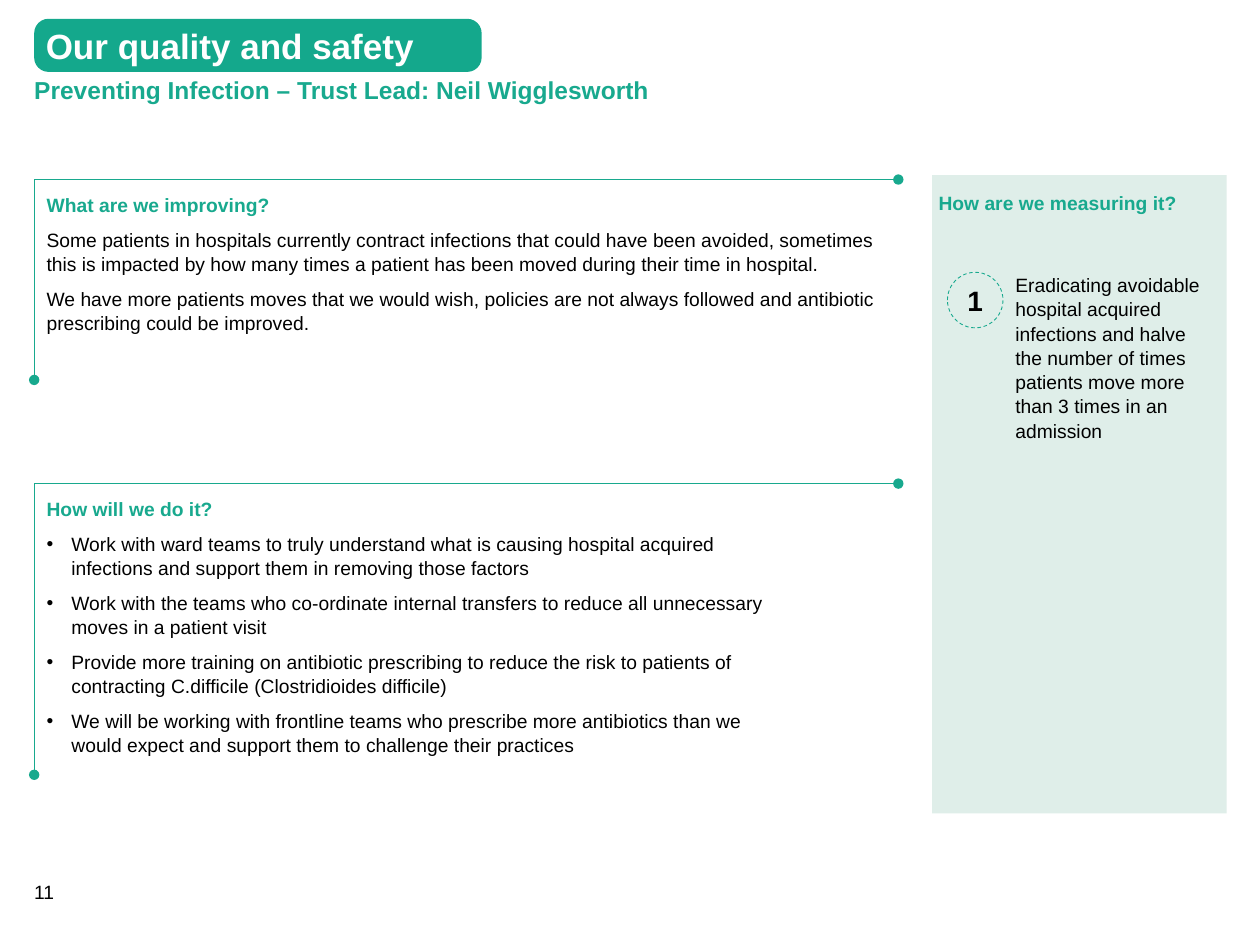
from dataclasses import dataclass

from lxml import etree
from pptx import Presentation
from pptx.dml.color import RGBColor
from pptx.enum.dml import MSO_LINE
from pptx.enum.shapes import MSO_SHAPE
from pptx.enum.text import MSO_ANCHOR, PP_ALIGN
from pptx.oxml.ns import qn
from pptx.util import Cm, Pt

RECTANGLE, ROUNDED, OVAL = MSO_SHAPE.RECTANGLE, MSO_SHAPE.ROUNDED_RECTANGLE, MSO_SHAPE.OVAL
TOP, MIDDLE = MSO_ANCHOR.TOP, MSO_ANCHOR.MIDDLE
LEFT, CENTER = PP_ALIGN.LEFT, PP_ALIGN.CENTER
DASH = MSO_LINE.DASH


@dataclass(frozen=True)
class Theme:
    font: str = "Arial"
    banner: RGBColor = RGBColor(0x14, 0xA8, 0x8C)
    accent: RGBColor = RGBColor(0x18, 0xA9, 0x8E)
    tint: RGBColor = RGBColor(0xDF, 0xEE, 0xE9)
    white: RGBColor = RGBColor(0xFF, 0xFF, 0xFF)
    black: RGBColor = RGBColor(0, 0, 0)
    body: int = 11
    subtitle: int = 14
    number: int = 16
    title: int = 20
    rule: float = 0.5
    gap: int = 6
    leading: float = 1.05


THEME = Theme()


def set_values(target, values):
    for name, value in values.items():
        setattr(target, name, value)


def set_frame(shape, inset=0, anchor=TOP):
    margins = dict.fromkeys(
        ("margin_left", "margin_top", "margin_right", "margin_bottom"), Cm(inset))
    set_values(shape.text_frame, {"word_wrap": True, "vertical_anchor": anchor, **margins})
    return shape.text_frame


def write(para, text, size=THEME.body, color=THEME.black, bold=False, **layout):
    set_values(para, {"alignment": LEFT, **layout})
    span = para.add_run()
    span.text = text
    set_values(span.font, {"name": THEME.font, "size": Pt(size), "bold": bold})
    span.font.color.rgb = color


def add_text(page, box, text, inset=0, anchor=TOP, **style):
    shape = page.shapes.add_textbox(*map(Cm, box))
    write(set_frame(shape, inset, anchor).paragraphs[0], text, **style)
    return shape


def add_block(shapes, kind, box, fill):
    shape = shapes.add_shape(kind, *map(Cm, box))
    shape.shadow.inherit = False
    shape.fill.solid()
    shape.fill.fore_color.rgb = fill
    shape.line.fill.background()
    return shape


def set_rule(line):
    line.color.rgb = THEME.accent
    line.width = Pt(THEME.rule)


def add_bullet(para):
    properties = para._p.get_or_add_pPr()
    properties.set("marL", str(Cm(0.5)))
    properties.set("indent", str(-Cm(0.5)))
    etree.SubElement(properties, qn("a:buFont")).set("typeface", THEME.font)
    etree.SubElement(properties, qn("a:buChar")).set("char", "•")


def add_bracket(page, box):
    left, top, width, height = map(Cm, box)
    builder = page.shapes.build_freeform(left, top + height)
    builder.add_line_segments([(left, top), (left + width, top)], close=False)
    bracket = builder.convert_to_shape()
    bracket.shadow.inherit = False
    bracket.fill.background()
    set_rule(bracket.line)
    outline = bracket.line._get_or_add_ln()
    for end in ("a:headEnd", "a:tailEnd"):
        etree.SubElement(outline, qn(end)).set("type", "oval")


def add_header(page, box, title, subtitle):
    left, top, width, height = box
    banner = add_block(page.shapes, ROUNDED, (left, top, 9.02, height), THEME.banner)
    banner.adjustments[0] = 0.27
    write(set_frame(banner, 0.15, MIDDLE).paragraphs[0], title,
          size=THEME.title, color=THEME.white, bold=True)
    add_text(page, (left, top + height + 0.05, width, 0.61), subtitle, anchor=MIDDLE,
             size=THEME.subtitle, color=THEME.accent, bold=True)


def add_section(page, box, text_width, heading, texts, bulleted=False):
    left, top, width, height = box
    add_bracket(page, box)
    spacing = {"space_after": Pt(THEME.gap), "line_spacing": THEME.leading}
    shape = add_text(page, (left + 0.25, top + 0.25, text_width, height - 0.5), heading,
                     color=THEME.accent, bold=True, **spacing)
    for text in texts:
        para = shape.text_frame.add_paragraph()
        if bulleted:
            add_bullet(para)
        write(para, text, **spacing)


def add_measures(page, box, heading, number, measure):
    left, top, width, height = box
    add_block(page.shapes, RECTANGLE, box, THEME.tint)
    group = page.shapes.add_group_shape()
    marker = add_block(group.shapes, OVAL, (left + 0.31, top + 1.96, 1.12, 1.12), THEME.tint)
    set_rule(marker.line)
    marker.line.dash_style = DASH
    write(set_frame(marker, anchor=MIDDLE).paragraphs[0], number,
          size=THEME.number, bold=True, alignment=CENTER)
    label = add_block(group.shapes, RECTANGLE, (left + 1.68, top + 1.96, 3.89, 3.3), THEME.tint)
    write(set_frame(label).paragraphs[0], measure,
          space_after=Pt(THEME.gap), line_spacing=THEME.leading)
    add_text(page, (left + 0.13, top + 0.33, width - 0.25, 0.5), heading,
             color=THEME.accent, bold=True)


def main():
    deck = Presentation()
    deck.slide_width, deck.slide_height = Cm(25.4), Cm(19.05)
    page = deck.slides.add_slide(deck.slide_layouts[6])
    margin, section_width = 0.69, 17.42

    add_text(page, (margin, 17.75, 1.4, 0.48), "11")
    add_header(page, (margin, 0.38, 18.34, 1.07), "Our quality and safety",
               "Preventing Infection – Trust Lead: Neil Wigglesworth")
    add_section(page, (margin, 3.62, section_width, 4.04), 16.74, "What are we improving?", [
        "Some patients in hospitals currently contract infections that could have been avoided, "
        "sometimes this is impacted by how many times a patient has been moved during their "
        "time in hospital.",
        "We have more patients moves that we would wish, policies are not always followed and "
        "antibiotic prescribing could be improved.",
    ])
    add_section(page, (margin, 9.75, section_width, 5.87), 14.96, "How will we do it?", [
        "Work with ward teams to truly understand what is causing hospital acquired infections "
        "and support them in removing those factors",
        "Work with the teams who co-ordinate internal transfers to reduce all unnecessary moves "
        "in a patient visit",
        "Provide more training on antibiotic prescribing to reduce the risk to patients of "
        "contracting C.difficile (Clostridioides difficile)",
        "We will be working with frontline teams who prescribe more antibiotics than we would "
        "expect and support them to challenge their practices",
    ], bulleted=True)
    add_measures(page, (18.79, 3.53, 5.94, 12.87), "How are we measuring it?", "1",
                 "Eradicating avoidable hospital acquired infections and halve the number of "
                 "times patients move more than 3 times in an admission")
    deck.save("out.pptx")


if __name__ == "__main__":
    main()
